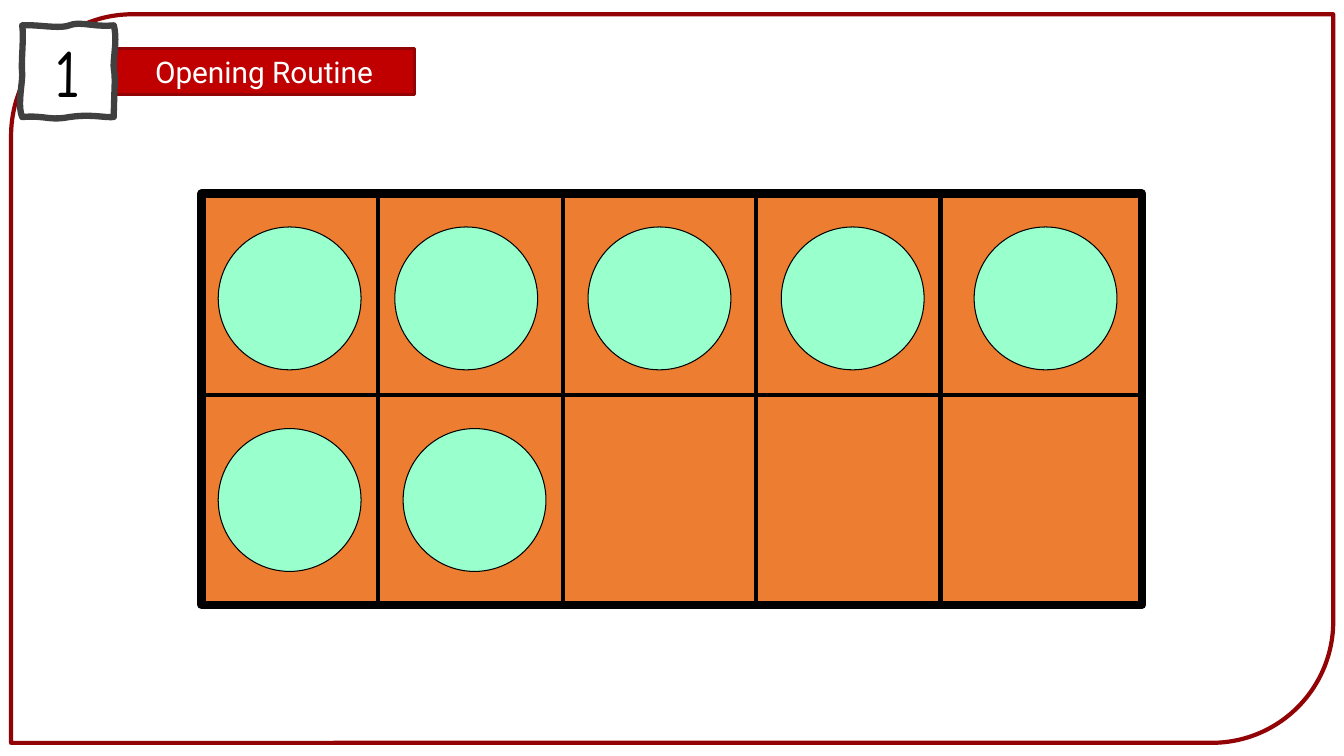
from lxml.etree import SubElement
from pptx import Presentation
from pptx.dml.color import RGBColor
from pptx.enum.shapes import MSO_CONNECTOR, MSO_SHAPE
from pptx.enum.text import MSO_ANCHOR, PP_ALIGN
from pptx.oxml.ns import qn
from pptx.util import Cm, Pt

WHITE = RGBColor(0xFF, 0xFF, 0xFF)
BLACK = RGBColor(0, 0, 0)
GREY = RGBColor(0x40, 0x40, 0x40)
RED = RGBColor(0xC0, 0, 0)
DARK_RED = RGBColor(0x92, 0x03, 0x05)
ORANGE = RGBColor(0xED, 0x7D, 0x31)
MINT = RGBColor(0x99, 0xFF, 0xCC)

BORDER = (0.28, 0.36, 33.32, 18.36)
BANNER = (2.87, 1.22, 7.57, 1.17)
FRAME = (5.08, 4.88, 23.7, 10.36)
ROW_LINE = 9.96
COLUMN_LINES = (9.53, 14.18, 19.05, 23.7)
COUNTER_SIZE = 3.6
COUNTER_ROWS = {5.72: (5.5, 9.95, 14.82, 19.69, 24.55), 10.8: (5.5, 10.16)}

BADGE_START = (0.56, 0.64)
BADGE_CURVES = (
    ((0.91, 0.61), (1.5, 0.74), (1.75, 0.64)),
    ((2.03, 0.53), (2.36, 0.69), (2.87, 0.64)),
    ((2.97, 1.02), (2.84, 1.5), (2.87, 1.73)),
    ((2.92, 1.96), (2.87, 2.41), (2.87, 2.95)),
    ((2.62, 2.97), (2.29, 2.87), (1.75, 2.95)),
    ((1.24, 3.05), (1.14, 2.9), (0.56, 2.95)),
    ((0.43, 2.64), (0.58, 2.08), (0.56, 1.83)),
    ((0.53, 1.57), (0.61, 0.89), (0.56, 0.64)),
)
CURVE_STEPS = 10

BANNER_FONT = {"name": "Roboto", "size": Pt(21.3)}
BADGE_FONT = {"name": "Comic Neue", "size": Pt(48)}


def style(s, fill, line, width):
    s.shadow.inherit = False
    if fill is None:
        s.fill.background()
    else:
        s.fill.solid()
        s.fill.fore_color.rgb = fill
    s.line.color.rgb = line
    s.line.width = Pt(width)
    return s


def add_box(shapes, kind, box, fill, line, width):
    return style(shapes.add_shape(kind, *map(Cm, box)), fill, line, width)


def add_rule(shapes, x1, y1, x2, y2):
    c = shapes.add_connector(MSO_CONNECTOR.STRAIGHT, Cm(x1), Cm(y1), Cm(x2), Cm(y2))
    c.line.color.rgb = BLACK
    c.line.width = Pt(3)
    SubElement(c._element.spPr, qn("a:effectLst"))


def write(s, text, font, color):
    tf = s.text_frame
    frame_format = {"margin_left": 0, "margin_right": 0, "margin_top": 0,
                    "margin_bottom": 0, "word_wrap": True,
                    "vertical_anchor": MSO_ANCHOR.MIDDLE}
    for name, value in frame_format.items():
        setattr(tf, name, value)
    p = tf.paragraphs[0]
    p.alignment = PP_ALIGN.CENTER
    r = p.add_run()
    r.text = text
    for name, value in font.items():
        setattr(r.font, name, value)
    r.font.color.rgb = color


def curve_points(start, curves):
    points = []
    for a, b, end in curves:
        for i in range(1, CURVE_STEPS + 1):
            t = i / CURVE_STEPS
            u = 1 - t
            points.append(tuple(
                Cm(u**3 * p0 + 3 * u**2 * t * p1 + 3 * u * t**2 * p2 + t**3 * p3)
                for p0, p1, p2, p3 in zip(start, a, b, end)))
        start = end
    return points


def main():
    prs = Presentation()
    prs.slide_width, prs.slide_height = Cm(33.87), Cm(19.05)
    shapes = prs.slides.add_slide(prs.slide_layouts[6]).shapes

    add_box(shapes, MSO_SHAPE.ROUND_2_DIAG_RECTANGLE, BORDER, None, DARK_RED, 3)

    add_box(shapes, MSO_SHAPE.RECTANGLE, FRAME, ORANGE, BLACK, 6)
    left, top, width, height = FRAME
    add_rule(shapes, left, ROW_LINE, left + width, ROW_LINE)
    for x in COLUMN_LINES:
        add_rule(shapes, x, top, x, top + height)

    for y, lefts in COUNTER_ROWS.items():
        for x in lefts:
            add_box(shapes, MSO_SHAPE.OVAL, (x, y, COUNTER_SIZE, COUNTER_SIZE),
                    MINT, BLACK, 0.75)

    banner = add_box(shapes, MSO_SHAPE.RECTANGLE, BANNER, RED, DARK_RED, 2.25)
    write(banner, "Opening Routine", BANNER_FONT, WHITE)

    builder = shapes.build_freeform(*map(Cm, BADGE_START))
    builder.add_line_segments(curve_points(BADGE_START, BADGE_CURVES), close=True)
    badge = style(builder.convert_to_shape(), WHITE, GREY, 4.5)
    write(badge, "1", BADGE_FONT, BLACK)

    prs.save("out.pptx")


if __name__ == "__main__":
    main()
